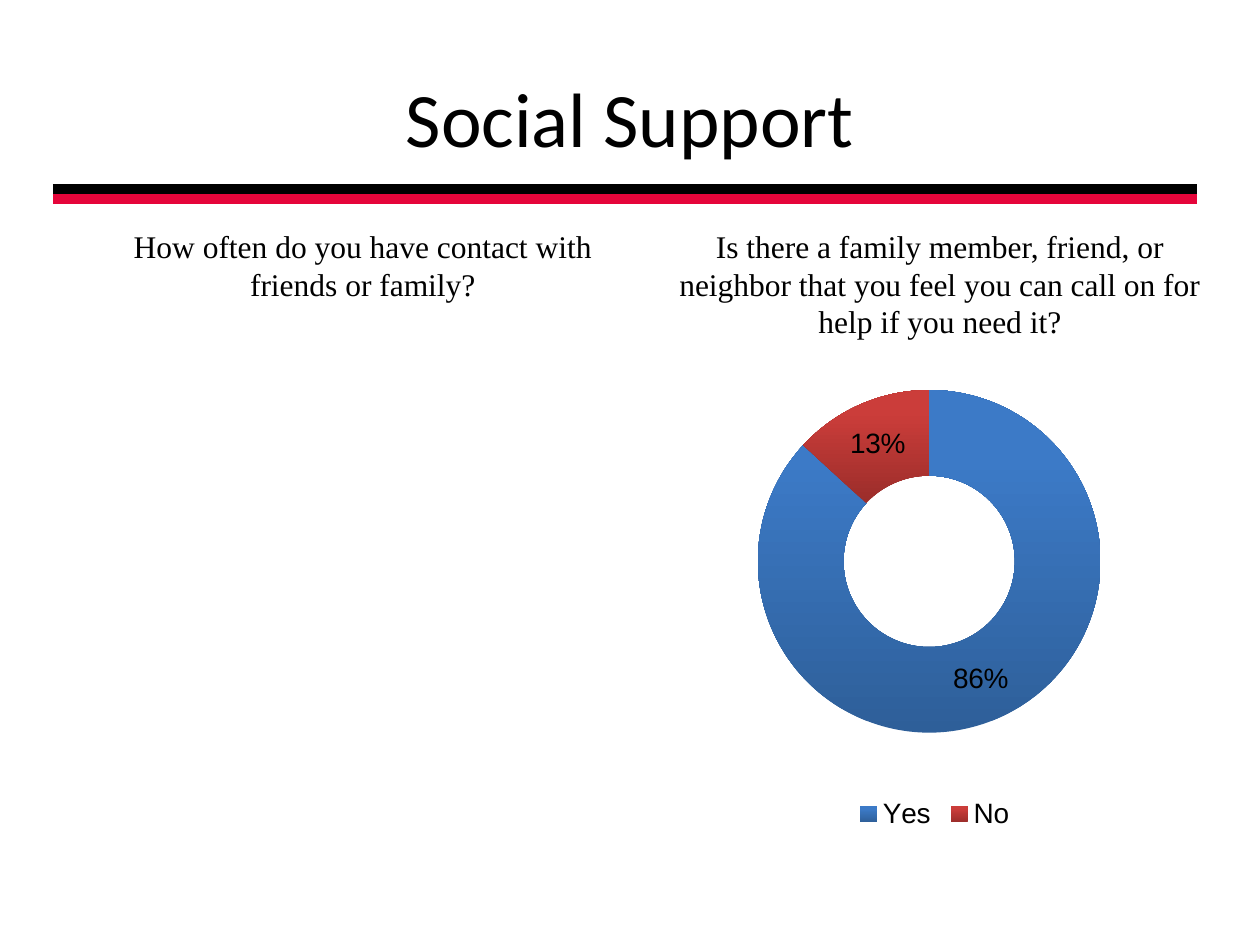
from lxml import etree
from pptx import Presentation
from pptx.chart.data import CategoryChartData
from pptx.dml.color import RGBColor
from pptx.enum.chart import XL_CHART_TYPE, XL_LEGEND_POSITION
from pptx.enum.shapes import MSO_CONNECTOR
from pptx.enum.text import MSO_ANCHOR, MSO_AUTO_SIZE, PP_ALIGN
from pptx.oxml.ns import qn
from pptx.util import Inches, Pt

DOUGHNUT = XL_CHART_TYPE.DOUGHNUT
BOTTOM = XL_LEGEND_POSITION.BOTTOM
STRAIGHT = MSO_CONNECTOR.STRAIGHT
MIDDLE, TOP = MSO_ANCHOR.MIDDLE, MSO_ANCHOR.TOP
CENTER = PP_ALIGN.CENTER

COLORS = {
    "black": "000000",
    "red": "E5053A",
    "yes_dark": "2E5F99",
    "yes_light": "3C7AC7",
    "no_dark": "9B2D2A",
    "no_light": "CB3D3A",
}


def rgb(name):
    return RGBColor.from_string(COLORS[name])


def place(sp, left, top, width, height):
    sp.left, sp.top = Inches(left), Inches(top)
    sp.width, sp.height = Inches(width), Inches(height)


def write(tf, text, font="Times New Roman", size=18, anchor=TOP):
    tf.word_wrap = True
    tf.vertical_anchor = anchor
    p = tf.paragraphs[0]
    p.alignment = CENTER
    r = p.add_run()
    r.text = text
    r.font.name = font
    r.font.size = Pt(size)
    r.font.color.rgb = rgb("black")


def add_title(s, text):
    title = s.shapes.title
    place(title, 0.5, 0.3, 9, 1.25)
    write(title.text_frame, text, font="Calibri", size=44, anchor=MIDDLE)


def add_rule(s, y, color):
    line = s.shapes.add_connector(STRAIGHT, Inches(0.42), Inches(y), Inches(9.5), Inches(y))
    line.line.color.rgb = rgb(color)
    line.line.width = Pt(6)
    etree.SubElement(line._element.spPr, qn("a:effectLst"))


def add_question(s, left, height, text):
    sp = s.shapes.add_textbox(Inches(left), Inches(1.75), Inches(4.42), Inches(height))
    write(sp.text_frame, text)
    sp.text_frame.auto_size = MSO_AUTO_SIZE.SHAPE_TO_FIT_TEXT


def set_layout(parent, index, x, y, w, h, inner=False):
    """Give a chart part a manual layout, in fractions of the chart."""
    for old in parent.findall(qn("c:layout")):
        parent.remove(old)
    layout = etree.Element(qn("c:layout"))
    manual = etree.SubElement(layout, qn("c:manualLayout"))
    values = {"xMode": "edge", "yMode": "edge", "x": x, "y": y, "w": w, "h": h}
    if inner:
        values = {"layoutTarget": "inner", **values}
    for tag, value in values.items():
        etree.SubElement(manual, qn(f"c:{tag}")).set("val", str(value))
    parent.insert(index, layout)


def fill_gradient(fill, dark, light):
    fill.gradient()
    fill.gradient_angle = 90
    first, last = fill.gradient_stops
    first.color.rgb, first.position = rgb(dark), 0
    last.color.rgb, last.position = rgb(light), 0.8


def add_doughnut(s, answers):
    data = CategoryChartData(number_format="0%")
    data.categories = list(answers)
    data.add_series("Series 1", list(answers.values()))
    chart = s.shapes.add_chart(
        DOUGHNUT, Inches(5.25), Inches(2.55), Inches(4.25), Inches(4.95), data
    ).chart
    chart.has_title = False
    chart.font.name = "Arial"
    chart.font.size = Pt(16)
    chart.font.color.rgb = rgb("black")

    chart.has_legend = True
    chart.legend.position = BOTTOM
    chart.legend.include_in_layout = False
    set_layout(chart.legend._element, 1, 0.35, 0.75, 0.32, 0.08)
    set_layout(chart._chartSpace.chart.plotArea, 0, 0.18, 0.1, 0.64, 0.57, inner=True)

    plot = chart.plots[0]
    plot.vary_by_categories = True
    plot.has_data_labels = True
    labels = plot.data_labels
    labels.show_value = True
    labels.show_percentage = False
    labels.number_format = "0%"
    labels.number_format_is_linked = False
    for i, answer in enumerate(answers):
        key = answer.lower()
        fill_gradient(plot.series[0].points[i].format.fill, f"{key}_dark", f"{key}_light")


def main():
    prs = Presentation()
    prs.slide_width, prs.slide_height = Inches(10), Inches(7.5)
    s = prs.slides.add_slide(prs.slide_layouts[5])
    add_rule(s, 1.5, "black")
    add_rule(s, 1.58, "red")
    add_title(s, "Social Support")
    add_doughnut(s, {"Yes": 0.86, "No": 0.13})
    add_question(s, 0.67, 0.71, "How often do you have contact with friends or family?")
    add_question(
        s, 5.25, 1.01,
        "Is there a family member, friend, or neighbor that you feel "
        "you can call on for help if you need it?",
    )
    prs.save("out.pptx")


if __name__ == "__main__":
    main()
